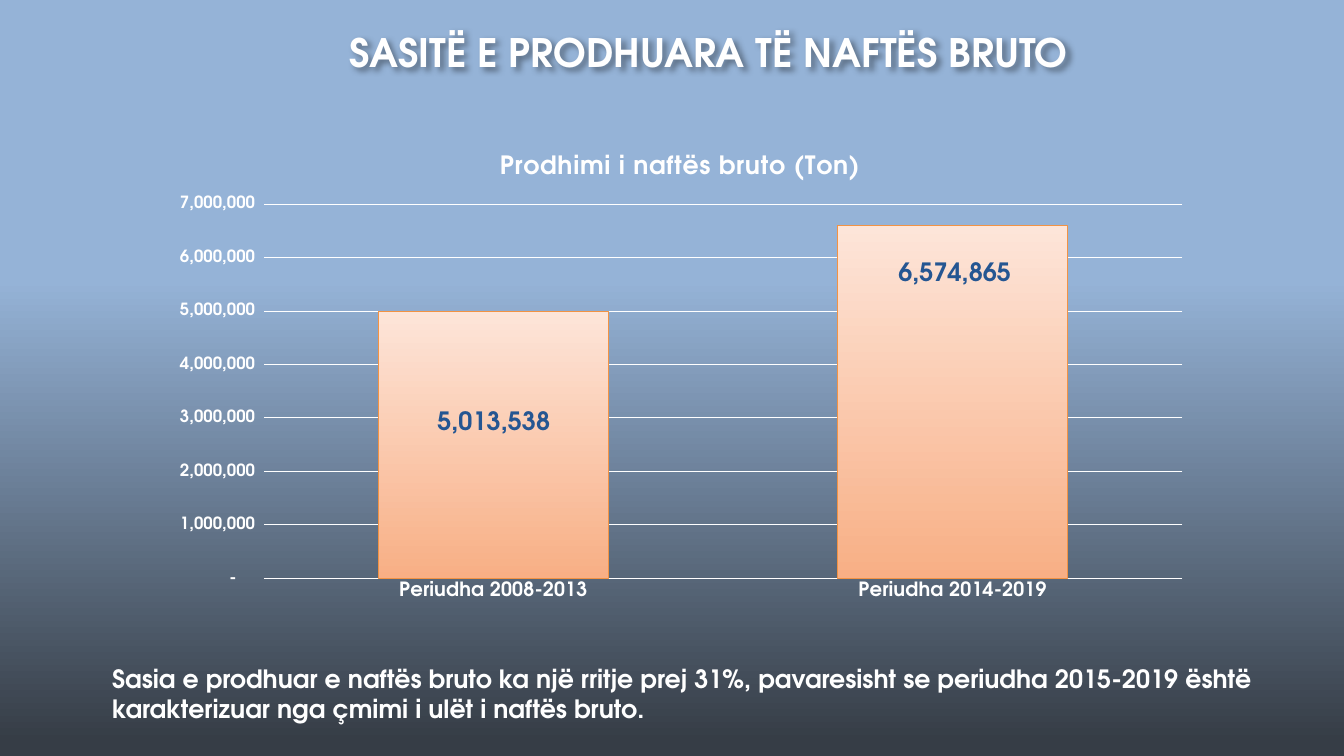
from pptx import Presentation, util as u
from pptx.chart import data
from pptx.dml.color import RGBColor
from pptx.enum import chart as ch, text
from pptx.oxml import parse_xml
from pptx.oxml.ns import nsdecls, qn

FONT = "TeX Gyre Adventor"
WHITE, BLUE, ORANGE = "FFFFFF", "255692", "F29344"
W, H = u.Inches(13.33), u.Inches(7.5)
PERIODS = ["Periudha 2008-2013", "Periudha 2014-2019"]
TONS = [5000000, 6600000]
QUANTITIES = ["5,013,538", "6,574,865"]
TON_FORMAT = r'_(* #,##0_);_(* \(#,##0\);_(* "-"??_);_('


def colour(value):
    return RGBColor.from_string(value)


def box(left, top, width, height):
    """Turn shares of the slide into lengths."""
    return int(left * W), int(top * H), int(width * W), int(height * H)


def style(font, size, value=WHITE):
    font.name, font.size, font.bold = FONT, u.Pt(size), True
    font.color.rgb = colour(value)


def rule(line, value=WHITE):
    line.color.rgb = colour(value)
    line.width = u.Pt(0.75)


def gradient(fill, *stops):
    """Fill from top to bottom with (position, colour) stops."""
    fill.gradient()
    fill.gradient_angle = 270
    for stop, (position, value) in zip(fill.gradient_stops, stops):
        stop.position = position
        stop.color.rgb = colour(value)


def write(shape, words, size, value=WHITE, wrap=True):
    tf = shape.text_frame
    tf.text = words
    tf.word_wrap = wrap
    tf.auto_size = text.MSO_AUTO_SIZE.SHAPE_TO_FIT_TEXT
    tf.vertical_anchor = text.MSO_ANCHOR.TOP
    style(tf.paragraphs[0].runs[0].font, size, value)
    return tf.paragraphs[0]


def add_title(s, words, place):
    title = s.shapes.title
    title.left, title.top, title.width, title.height = place
    p = write(title, words, 28)
    p.alignment = text.PP_ALIGN.CENTER
    # Soft shadow: the shape has no fill, so it falls behind the letters
    title.fill.background()
    title._element.spPr.append(parse_xml(
        f'<a:effectLst {nsdecls("a")}><a:outerShdw blurRad="50800" dist="38100" '
        'dir="2700000" algn="tl"><a:srgbClr val="000000"><a:alpha val="40000"/>'
        '</a:srgbClr></a:outerShdw></a:effectLst>'))


def add_text(s, words, place, value=WHITE, wrap=True):
    write(s.shapes.add_textbox(*place), words, 18, value, wrap)


def place_plot(chart, **shares):
    """Fix the inner plot area as shares of the chart."""
    plot_area = chart._chartSpace.chart.plotArea
    for old in plot_area.findall(qn("c:layout")):
        plot_area.remove(old)
    parts = "".join(f'<c:{k} val="{v}"/>' for k, v in shares.items())
    plot_area.insert(0, parse_xml(
        f'<c:layout {nsdecls("c")}><c:manualLayout><c:layoutTarget val="inner"/>'
        f'<c:xMode val="edge"/><c:yMode val="edge"/>{parts}'
        '</c:manualLayout></c:layout>'))


def add_columns(s, place):
    cd = data.CategoryChartData(number_format="#,##0")
    cd.categories = PERIODS
    cd.add_series("Prodhimi", TONS)
    chart = s.shapes.add_chart(ch.XL_CHART_TYPE.COLUMN_CLUSTERED, *place, cd).chart
    style(chart.font, 10)
    chart.has_legend = False
    chart.has_title = True
    tf = chart.chart_title.text_frame
    tf.text = "Prodhimi i naftës bruto (Ton)"
    font = tf.paragraphs[0].runs[0].font
    style(font, 18)
    font._element.set("spc", "50")  # letters half a point apart
    place_plot(chart, x=0.104, y=0.149, w=0.874, h=0.783)

    # Columns
    plot = chart.plots[0]
    plot.gap_width, plot.overlap, plot.vary_by_categories = 100, -24, False
    bars = plot.series[0].format
    gradient(bars.fill, (0, "FDE5D9"), (1, "F8AF85"))
    rule(bars.line, ORANGE)

    # Axes
    for axis, size in ((chart.category_axis, 14), (chart.value_axis, 12)):
        axis.major_tick_mark = axis.minor_tick_mark = ch.XL_TICK_MARK.NONE
        style(axis.tick_labels.font, size)
    rule(chart.category_axis.format.line)
    values = chart.value_axis
    values.minimum_scale, values.maximum_scale, values.major_unit = 0, 7e6, 1e6
    values.format.line.fill.background()
    rule(values.major_gridlines.format.line)
    values.tick_labels.number_format = TON_FORMAT
    values.tick_labels.number_format_is_linked = False


def main():
    prs = Presentation()
    prs.slide_width, prs.slide_height = W, H
    s = prs.slides.add_slide(prs.slide_layouts[5])
    gradient(s.background.fill, (0.37, "95B3D7"), (0.98, "363D46"))

    # Heading, chart and conclusion
    add_title(s, "SASITË E PRODHUARA TË NAFTËS BRUTO", box(0.079, 0.031, 0.897, 0.076))
    add_columns(s, box(0.115, 0.176, 0.782, 0.632))
    add_text(s, "Sasia e prodhuar e naftës bruto ka një rritje prej 31%, pavaresisht se "
             "periudha 2015-2019 është karakterizuar nga çmimi i ulët i naftës bruto.",
             box(0.076, 0.871, 0.893, 0.095))

    # Quantities on the columns
    for quantity, left, top in zip(QUANTITIES, (0.318, 0.661), (0.529, 0.333)):
        add_text(s, quantity, box(left, top, 0.1, 0.053), BLUE, wrap=False)

    prs.save("out.pptx")


if __name__ == "__main__":
    main()
